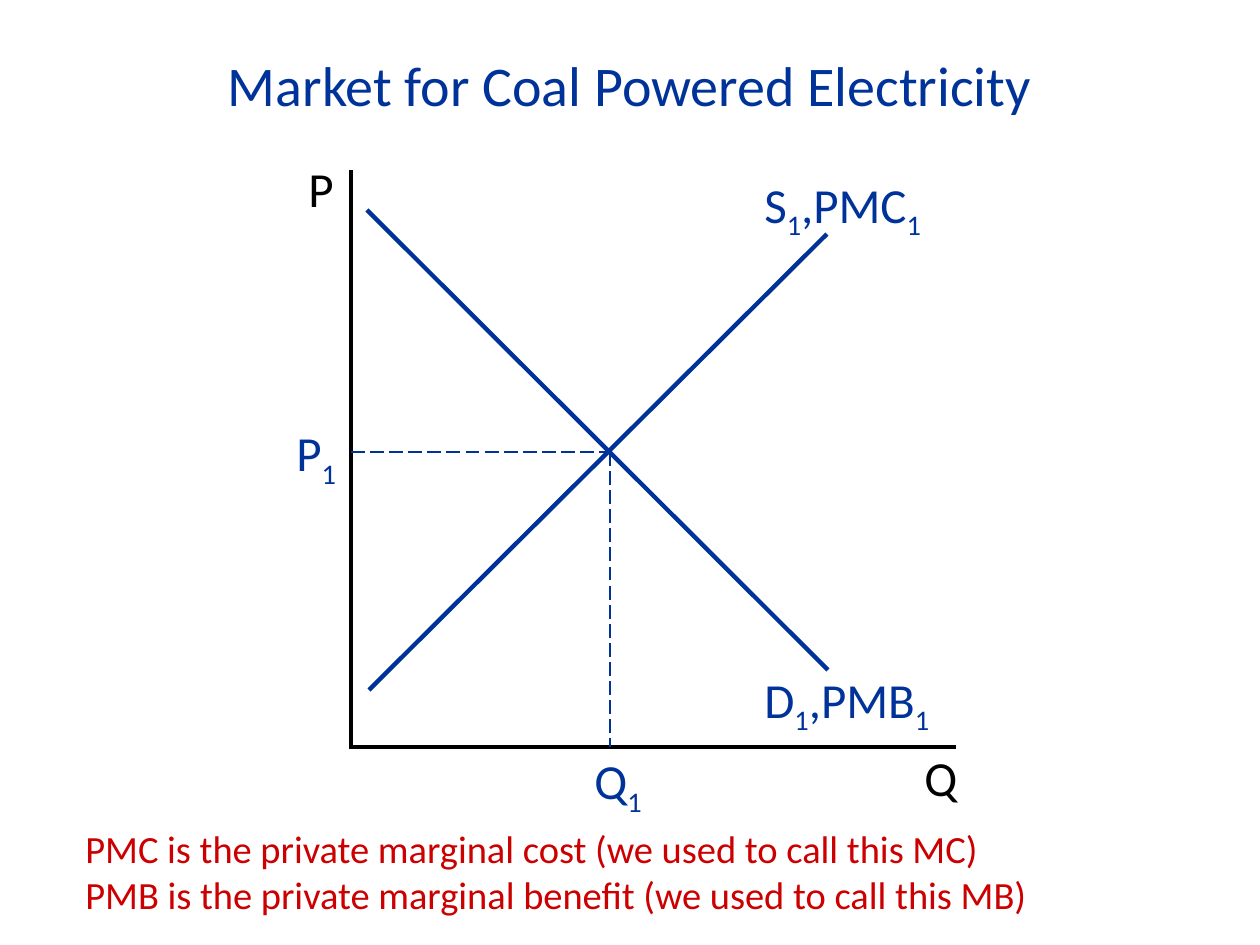
from pptx import Presentation
from pptx import util as u
from pptx.dml.color import RGBColor
from pptx.enum import dml, shapes, text
from pptx.oxml.ns import qn
from lxml import etree

PX = 914400 // 126  # EMU per pixel
BLUE = RGBColor(0x00, 0x33, 0x99)
BLACK = RGBColor(0x00, 0x00, 0x00)
RED = RGBColor(0xCC, 0x00, 0x00)
FONT = "Calibri"


def format_span(span, size, color):
    span.font.name = FONT
    span.font.size = u.Pt(size)
    span.font.color.rgb = color


def add_box(left, top, width, height):
    box = page.shapes.add_textbox(left * PX, top * PX, width * PX, height * PX)
    box.text_frame.word_wrap = True
    return box


deck = Presentation()
deck.slide_width, deck.slide_height = u.Inches(10), u.Inches(7.5)
page = deck.slides.add_slide(deck.slide_layouts[5])

# Title
title = page.shapes.title
title.left, title.top, title.width, title.height = 88 * PX, 44 * PX, 1084 * PX, 81 * PX
title.text_frame.text = "Market for Coal Powered Electricity"
title.text_frame.vertical_anchor = text.MSO_ANCHOR.MIDDLE
title.text_frame.paragraphs[0].alignment = text.PP_ALIGN.CENTER
format_span(title.text_frame.paragraphs[0].runs[0], 32, BLUE)

# Axes, curves and dashed guides to the equilibrium
origin_x, origin_y = 351, 747
market_x, market_y = 610, 452
lines = [
    (369, 690, 827, 234, BLUE, 2.5, False),  # supply
    (367, 210, 828, 670, BLUE, 2.5, False),  # demand
    (origin_x, 170, origin_x, origin_y + 2, BLACK, 2.5, False),
    (origin_x, origin_y, 956, origin_y, BLACK, 2.5, False),
    (origin_x, market_y, market_x, market_y, BLUE, 1, True),
    (market_x, market_y, market_x, origin_y, BLUE, 1, True),
]
for x1, y1, x2, y2, color, weight, dashed in lines:
    line = page.shapes.add_connector(
        shapes.MSO_CONNECTOR.STRAIGHT, x1 * PX, y1 * PX, x2 * PX, y2 * PX)
    line.line.color.rgb = color
    line.line.width = u.Pt(weight)
    if dashed:
        line.line.dash_style = dml.MSO_LINE.LONG_DASH
    etree.SubElement(line._element.spPr, qn("a:effectLst"))

# Labels: every digit is a subscript
labels = [
    ("P", 296, 164, 57, 62, BLACK, 0.8),
    ("Q", 912, 741, 64, 72, BLACK, 1),
    ("S1,PMC1", 752, 168, 195, 72, BLUE, 1),
    ("D1,PMB1", 752, 663, 199, 72, BLUE, 1),
    ("P1", 284, 423, 73, 62, BLUE, 0.8),
    ("Q1", 582, 751, 95, 60, BLUE, 0.8),
]
for label, left, top, width, height, color, spacing in labels:
    para = add_box(left, top, width, height).text_frame.paragraphs[0]
    para.line_spacing = spacing
    for part in label.replace("1", "|1|").split("|"):
        if part:
            span = para.add_run()
            span.text = part
            format_span(span, 28, color)
            if part == "1":
                span._r.get_or_add_rPr().set("baseline", "-25000")

# Definitions
notes = add_box(73, 819, 1113, 106)
notes.text_frame.text = (
    "PMC is the private marginal cost (we used to call this MC)\n"
    "PMB is the private marginal benefit (we used to call this MB)")
for para in notes.text_frame.paragraphs:
    format_span(para.runs[0], 22, RED)

deck.save("out.pptx")
